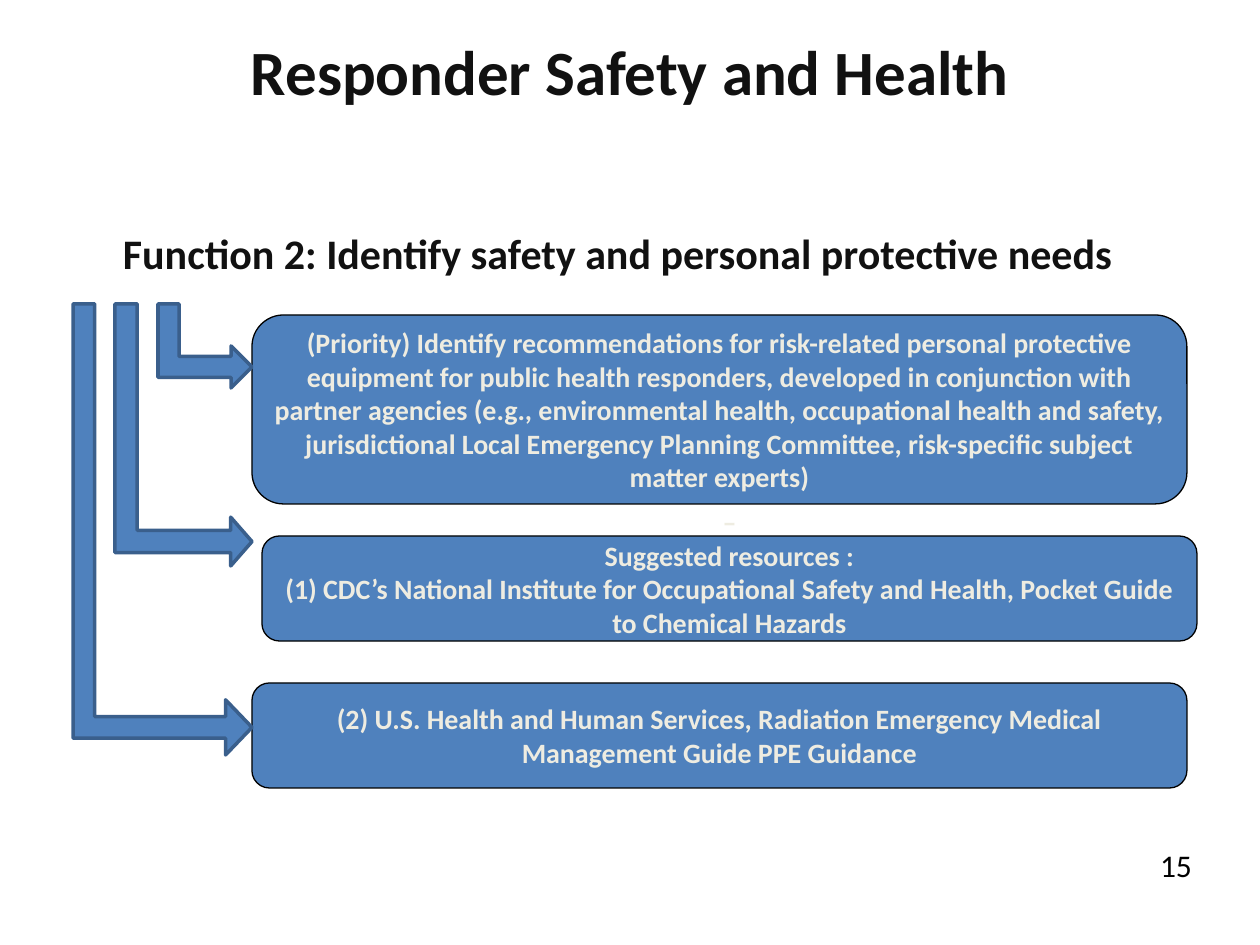
from dataclasses import dataclass

from pptx import Presentation, util as u
from pptx.dml.color import RGBColor
from pptx.enum import shapes, text

PX = 914400 / 126


@dataclass(frozen=True)
class Theme:
    font: str = "Calibri"
    heading: str = "111111"
    number: str = "000000"
    box_text: str = "EEECE1"
    fill: str = "4F81BD"
    box_line: str = "000000"
    arrow_line: str = "3A5F8C"
    title_size: int = 36
    function_size: int = 24
    number_size: int = 18
    box_size: int = 16


def px(*lengths):
    return [u.Emu(round(length * PX)) for length in lengths]


class SlideBuilder:
    def __init__(self, slide, theme):
        self.slide = slide
        self.theme = theme

    def set_text(self, shape, lines, size, color, bold=True, align=text.PP_ALIGN.CENTER,
                 anchor=text.MSO_ANCHOR.MIDDLE):
        frame = shape.text_frame
        frame.word_wrap = True
        frame.vertical_anchor = anchor
        frame.text = "\n".join(lines)
        for paragraph in frame.paragraphs:
            paragraph.alignment = align
            for run in paragraph.runs:
                run.font.name = self.theme.font
                run.font.size = u.Pt(size)
                run.font.bold = bold
                run.font.color.rgb = RGBColor.from_string(color)
        return frame

    def label(self, area, words, size, color, **style):
        shape = self.slide.shapes.add_textbox(*px(*area))
        return self.set_text(shape, [words], size, color, **style)

    def preset(self, kind, area, line, width):
        shape = self.slide.shapes.add_shape(kind, *px(*area))
        shape.shadow.inherit = False
        shape.fill.solid()
        shape.fill.fore_color.rgb = RGBColor.from_string(self.theme.fill)
        shape.line.color.rgb = RGBColor.from_string(line)
        shape.line.width = u.Pt(width)
        return shape

    def box(self, area, lines):
        shape = self.preset(shapes.MSO_SHAPE.ROUNDED_RECTANGLE, area, self.theme.box_line, 0.75)
        return self.set_text(shape, lines, self.theme.box_size, self.theme.box_text)

    def bent_arrow(self, right, top, reach, drop, adjustments):
        """Arrow that runs down by drop, then right by reach to its tip."""
        # The frame is laid out unrotated about the same centre.
        area = (right - (reach + drop) / 2, top + (drop - reach) / 2, drop, reach)
        shape = self.preset(shapes.MSO_SHAPE.BENT_UP_ARROW, area, self.theme.arrow_line, 2)
        shape.rotation = 90
        for index, value in enumerate(adjustments):
            shape.adjustments[index] = value


def main():
    deck = Presentation()
    deck.slide_width, deck.slide_height = px(1260, 945)
    theme = Theme()
    builder = SlideBuilder(deck.slides.add_slide(deck.slide_layouts[6]), theme)

    # Title
    title = builder.label((63, 38, 1134, 88), "Responder Safety and Health",
                          theme.title_size, theme.heading)
    title.paragraphs[0].line_spacing = u.Pt(30)

    # Recommendation and resources
    box_left, box_width = 252, 935
    builder.box((box_left, 315, box_width, 189), [
        "(Priority) Identify recommendations for risk-related personal protective equipment "
        "for public health responders, developed in conjunction with partner agencies "
        "(e.g., environmental health, occupational health and safety, jurisdictional Local "
        "Emergency Planning Committee, risk-specific subject matter experts)"])
    resources = builder.box((box_left + 10, 536, box_width, 105), [
        "–",
        "Suggested resources :",
        "(1) CDC’s National Institute for Occupational Safety and Health, Pocket Guide "
        "to Chemical Hazards"])
    resources.margin_bottom = px(40)[0]  # lifts the lines above the middle
    builder.box((box_left, 683, box_width, 105), [
        "(2) U.S. Health and Human Services, Radiation Emergency Medical Management Guide "
        "PPE Guidance"])

    # Arrows from the function to each box: reach, drop, adjustments
    arrows = [
        (137, 262, (0.162, 0.178, 0.156)),
        (94, 84, (0.25, 0.25, 0.25)),
        (179, 451, (0.121, 0.154, 0.148)),
    ]
    for reach, drop, adjustments in arrows:
        builder.bent_arrow(box_left, 304, reach, drop, adjustments)

    # Slide number
    builder.label((1134, 840, 84, 50), "15", theme.number_size, theme.number,
                  bold=False, anchor=text.MSO_ANCHOR.TOP)

    # Function heading
    function = builder.label((63, 221, 1134, 84),
                             "Function 2: Identify safety and personal protective needs",
                             theme.function_size, theme.heading,
                             align=text.PP_ALIGN.LEFT, anchor=text.MSO_ANCHOR.TOP)
    function.margin_left = px(60)[0]

    deck.save("out.pptx")


if __name__ == "__main__":
    main()
